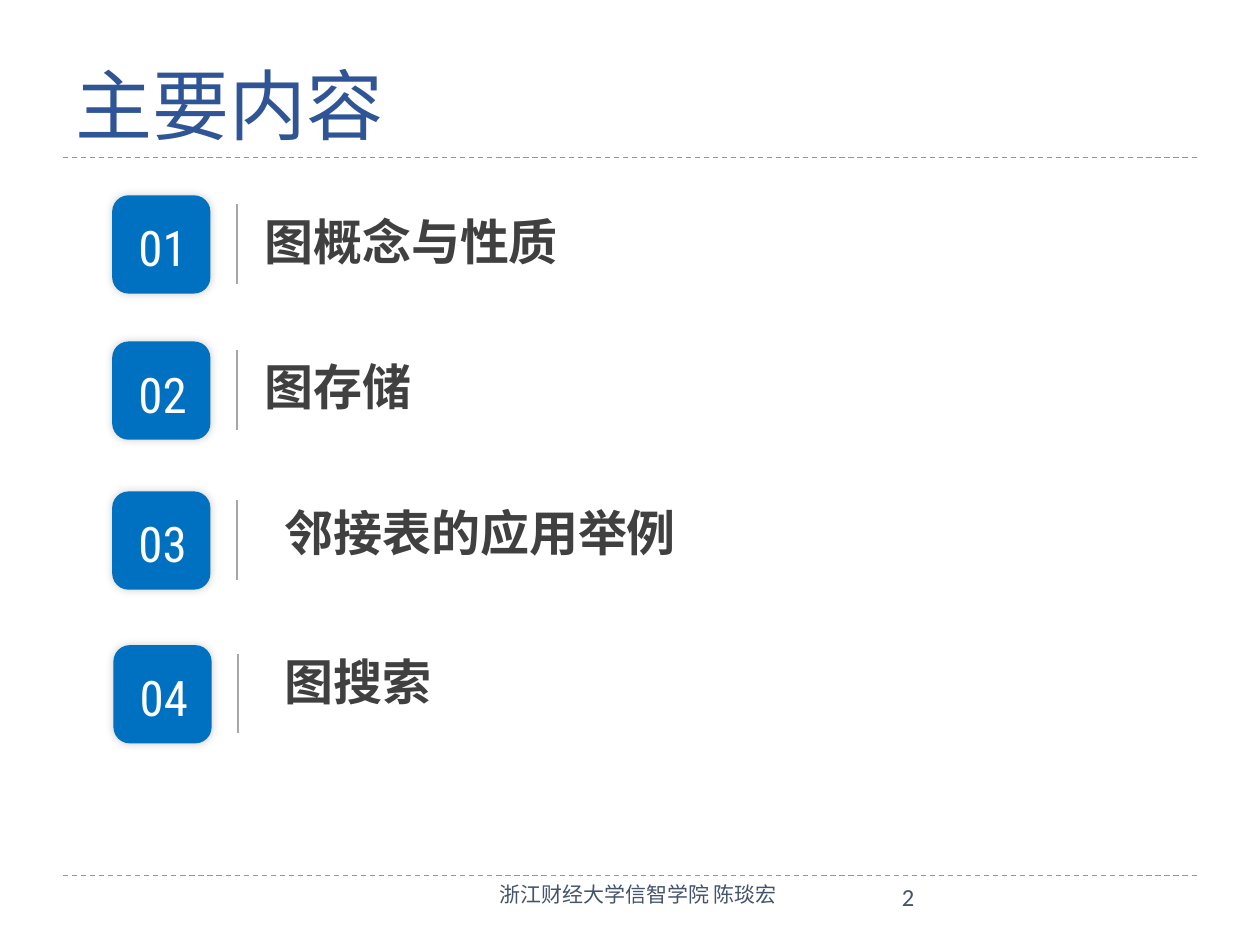
from lxml import etree
from pptx import Presentation
from pptx import util as u
from pptx.dml import color as col
from pptx.enum import dml, shapes, text
from pptx.oxml import ns

COLORS = {"title": "2F5597", "rule": "ED7D31", "footer": "44546A", "badge": "0070C0",
          "number": "FFFFFF", "topic": "404040", "divider": "A6A6A6", "shadow": "000000"}
STYLES = {
    "title": {"size": u.Pt(44), "name": "Calibri", "bold": False},
    "footer": {"size": u.Pt(12), "name": "Calibri"},
    "page": {"size": u.Pt(14), "name": "Calibri"},
    "number": {"size": u.Pt(28), "name": "Roboto Condensed"},
    "topic": {"size": u.Pt(28), "name": "Noto Sans CJK SC", "bold": True},
}
LEFT, CENTER = text.PP_ALIGN.LEFT, text.PP_ALIGN.CENTER


def write(holder, words, style, color, align=LEFT):
    frame = holder.text_frame
    frame.word_wrap = True
    line = frame.paragraphs[0]
    line.alignment = align
    run = line.add_run()
    run.text = words
    for key, value in STYLES[style].items():
        setattr(run.font, key, value)
    run.font.color.rgb = col.RGBColor.from_string(COLORS[color])
    if style == "topic":
        etree.SubElement(run.font._element, ns.qn("a:ea"), typeface=run.font.name)


def draw_line(x1, y1, x2, y2, color, width):
    line = slide.shapes.add_connector(shapes.MSO_CONNECTOR.STRAIGHT,
                                      *map(u.Inches, (x1, y1, x2, y2)))
    line.line.color.rgb = col.RGBColor.from_string(COLORS[color])
    line.line.width = u.Pt(width)
    etree.SubElement(line._element.spPr, ns.qn("a:effectLst"))
    return line


deck = Presentation()
deck.slide_width, deck.slide_height = u.Inches(10), u.Inches(7.5)
slide = deck.slides.add_slide(deck.slide_layouts[5])

for rule_y in (6.95, 1.25):
    rule = draw_line(0.5, rule_y, 9.5, rule_y, "rule", 0.75)
    rule.line.dash_style = dml.MSO_LINE.DASH

heading = slide.shapes.title
place = {"left": 0.5, "top": 0.17, "width": 9, "height": 1.08}
for side, length in place.items():
    setattr(heading, side, u.Inches(length))
write(heading, "主要内容", "title", "title")
heading.text_frame.vertical_anchor = text.MSO_ANCHOR.BOTTOM
heading.text_frame.auto_size = text.MSO_AUTO_SIZE.NONE
heading.text_frame.paragraphs[0].line_spacing = 0.9

topics = [
    ("图概念与性质", 0.89, 1.55, 2, 1.63, 6.23),
    ("图存储", 0.89, 2.71, 2, 2.78, 3.11),
    ("邻接表的应用举例", 0.89, 3.9, 2.16, 3.94, 3.97),
    ("图搜索", 0.9, 5.12, 2.16, 5.12, 3.97),
]
for number, (topic, x, y, topic_x, topic_y, topic_width) in enumerate(topics, 1):
    badge = slide.shapes.add_shape(shapes.MSO_SHAPE.ROUNDED_RECTANGLE,
                                   *map(u.Inches, (x, y, 0.78, 0.78)))
    badge.fill.solid()
    badge.fill.fore_color.rgb = col.RGBColor.from_string(COLORS["badge"])
    badge.line.fill.background()
    badge.shadow.inherit = False
    effects = badge._element.spPr.find(ns.qn("a:effectLst"))
    glow = etree.SubElement(effects, ns.qn("a:outerShdw"), blurRad=str(u.Pt(5)),
                            dist="0", dir="0", algn="ctr", rotWithShape="0")
    shade = etree.SubElement(glow, ns.qn("a:srgbClr"), val=COLORS["shadow"])
    etree.SubElement(shade, ns.qn("a:alpha"), val="19000")

    label = slide.shapes.add_textbox(*map(u.Inches, (x + 0.01, y + 0.13, 0.78, 0.57)))
    write(label, f"{number:02}", "number", "number", CENTER)
    draw_line(x + 0.99, y + 0.07, x + 0.99, y + 0.7, "divider", 1)
    entry = slide.shapes.add_textbox(*map(u.Inches, (topic_x, topic_y, topic_width, 0.57)))
    write(entry, topic, "topic", "topic")

footer = slide.shapes.add_textbox(*map(u.Inches, (3.17, 6.95, 3.83, 0.4)))
write(footer, "浙江财经大学信智学院 陈琰宏 ", "footer", "footer", CENTER)
page = slide.shapes.add_textbox(*map(u.Inches, (7.06, 6.95, 2.25, 0.4)))
write(page, "2", "page", "footer")

deck.save("out.pptx")
